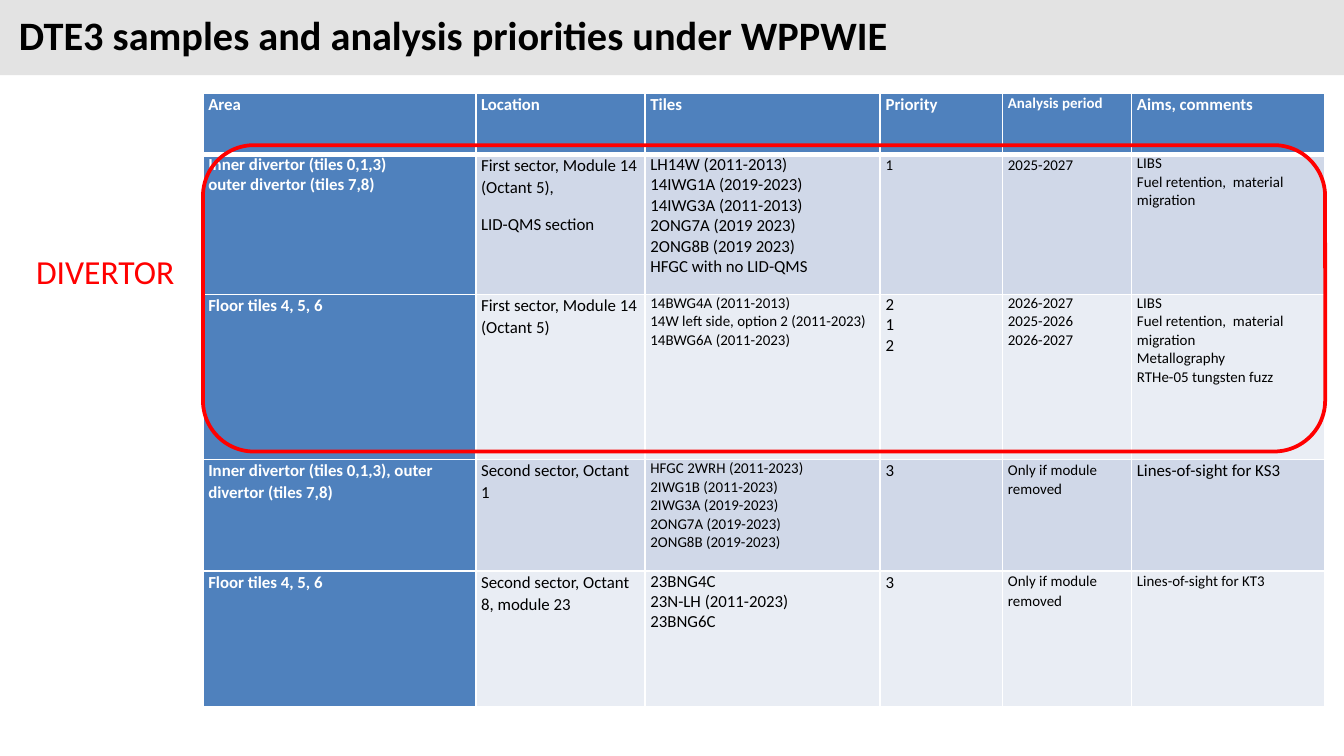
from dataclasses import dataclass

from lxml import etree
from pptx import Presentation
from pptx import util as u
from pptx.dml.color import RGBColor
from pptx.enum import shapes, text
from pptx.oxml.ns import qn


@dataclass(frozen=True)
class Theme:
    font: str = "Calibri"
    black: str = "000000"
    white: str = "FFFFFF"
    red: str = "FF0000"
    band: str = "E3E3E3"
    blue: str = "4F81BD"
    stripes: tuple[str, str] = ("D0D8E8", "E9EDF4")
    title: float = 21.6
    label: float = 18
    body: float = 9
    small: float = 8


@dataclass(frozen=True)
class Cell:
    lines: tuple[str, ...]
    size: float
    spaced: bool


T = Theme()


def spaced(*lines: str, size: float = T.body) -> Cell:
    return Cell(lines, size, True)


def tight(*lines: str, size: float = T.body) -> Cell:
    return Cell(lines, size, False)


COLS = (2.03, 1.26, 1.75, 0.91, 0.96, 1.44)
HEIGHTS = (0.46, 1.04, 1.23, 0.83, 1.01)
FUEL = "Fuel retention,  material migration"
FLOOR = spaced("Floor tiles 4, 5, 6")
REMOVED = spaced("Only if module removed", size=T.small)
ROWS = (
    (
        spaced("Area"), spaced("Location"), spaced("Tiles"), spaced("Priority"),
        spaced("Analysis period", size=T.small), spaced("Aims, comments"),
    ),
    (
        tight("Inner divertor (tiles 0,1,3)", "outer divertor (tiles 7,8)"),
        spaced("First sector, Module 14 (Octant 5),", "LID-QMS section"),
        tight("LH14W (2011-2013)", "14IWG1A (2019-2023)", "14IWG3A (2011-2013)",
              "2ONG7A (2019 2023)", "2ONG8B (2019 2023)", "HFGC with no LID-QMS"),
        spaced("1", size=T.small),
        spaced("2025-2027", size=T.small),
        tight("LIBS", FUEL, size=T.small),
    ),
    (
        FLOOR,
        spaced("First sector, Module 14 (Octant 5)"),
        tight("14BWG4A (2011-2013)", "14W left side, option 2 (2011-2023)",
              "14BWG6A (2011-2023)", size=T.small),
        tight("2", "1", "2"),
        tight("2026-2027", "2025-2026", "2026-2027", size=T.small),
        tight("LIBS", FUEL, "Metallography", "RTHe-05 tungsten fuzz", size=T.small),
    ),
    (
        spaced("Inner divertor (tiles 0,1,3), outer divertor (tiles 7,8)"),
        spaced("Second sector, Octant 1"),
        tight("HFGC 2WRH (2011-2023)", "2IWG1B (2011-2023)", "2IWG3A (2019-2023)",
              "2ONG7A (2019-2023)", "2ONG8B (2019-2023)", size=T.small),
        spaced("3"),
        REMOVED,
        spaced("Lines-of-sight for KS3"),
    ),
    (
        FLOOR,
        spaced("Second sector, Octant 8, module 23"),
        tight("23BNG4C", "23N-LH (2011-2023)", "23BNG6C"),
        spaced("3"),
        REMOVED,
        spaced("Lines-of-sight for KT3", size=T.small),
    ),
)


def rgb(color: str) -> RGBColor:
    return RGBColor.from_string(color)


def add_run(p, words: str, size: float, color: str, bold: bool = False) -> None:
    r = p.add_run()
    r.text = words
    r.font.name = T.font
    r.font.size = u.Pt(size)
    r.font.bold = bold
    r.font.color.rgb = rgb(color)


def add_text(s, box: tuple[float, ...], words: str, size: float, color: str,
             bold: bool = False, wrap: bool = True):
    tf = s.shapes.add_textbox(*map(u.Inches, box)).text_frame
    tf.word_wrap = wrap
    add_run(tf.paragraphs[0], words, size, color, bold)
    return tf


def set_borders(c, top: float, bottom: float) -> None:
    tcPr = c._tc.get_or_add_tcPr()
    for i, (side, width) in enumerate(zip("LRTB", (1, 1, top, bottom))):
        ln = etree.Element(qn(f"a:ln{side}"), w=str(u.Pt(width)))
        fill = etree.SubElement(ln, qn("a:solidFill"))
        etree.SubElement(fill, qn("a:srgbClr"), val=T.white)
        tcPr.insert(i, ln)


def fill_cell(c, cell: Cell, row: int, col: int) -> None:
    heading = row == 0 or col == 0
    c.fill.solid()
    c.fill.fore_color.rgb = rgb(T.blue if heading else T.stripes[(row - 1) % 2])
    c.margin_left = c.margin_right = u.Inches(0.04)
    c.margin_top = c.margin_bottom = 0
    set_borders(c, 3 if row == 1 else 1, 3 if row == 0 else 1)
    tf = c.text_frame
    for i, line in enumerate(cell.lines):
        p = tf.add_paragraph() if i else tf.paragraphs[0]
        if cell.spaced:
            p.line_spacing = 1.07
            p.space_after = u.Pt(8)
        add_run(p, line, cell.size, T.white if heading else T.black, heading)


def add_samples_table(s) -> None:
    box = (1.51, 0.69, sum(COLS), sum(HEIGHTS))
    table = s.shapes.add_table(len(ROWS), len(COLS), *map(u.Inches, box)).table
    for column, width in zip(table.columns, COLS):
        column.width = u.Inches(width)
    for i, (height, row) in enumerate(zip(HEIGHTS, ROWS)):
        table.rows[i].height = u.Inches(height)
        for j, cell in enumerate(row):
            fill_cell(table.cell(i, j), cell, i, j)


def main() -> None:
    prs = Presentation()
    prs.slide_width = u.Inches(10)
    prs.slide_height = u.Inches(10 * 9 / 16)
    s = prs.slides.add_slide(prs.slide_layouts[6])

    band = s.shapes.add_shape(shapes.MSO_SHAPE.RECTANGLE, 0, 0, prs.slide_width, u.Inches(0.56))
    band.shadow.inherit = False
    band.fill.solid()
    band.fill.fore_color.rgb = rgb(T.band)
    band.line.fill.background()

    tf = add_text(s, (0.07, 0.09, 8.25, 0.38),
                  "DTE3 samples and analysis priorities under WPPWIE", T.title, T.black, True)
    tf.vertical_anchor = text.MSO_ANCHOR.MIDDLE
    tf.margin_left = tf.margin_right = u.Inches(0.07)
    tf.margin_top = tf.margin_bottom = u.Inches(0.04)
    tf.paragraphs[0].line_spacing = 0.9

    add_samples_table(s)

    frame = s.shapes.add_shape(shapes.MSO_SHAPE.ROUNDED_RECTANGLE,
                               *map(u.Inches, (1.51, 1.08, 8.35, 2.28)))
    frame.shadow.inherit = False
    frame.fill.background()
    frame.line.color.rgb = rgb(T.red)
    frame.line.width = u.Pt(2)

    tf = add_text(s, (0.17, 1.82, 1.24, 0.4), "DIVERTOR", T.label, T.red, wrap=False)
    tf.auto_size = text.MSO_AUTO_SIZE.SHAPE_TO_FIT_TEXT

    prs.save("out.pptx")


if __name__ == "__main__":
    main()
